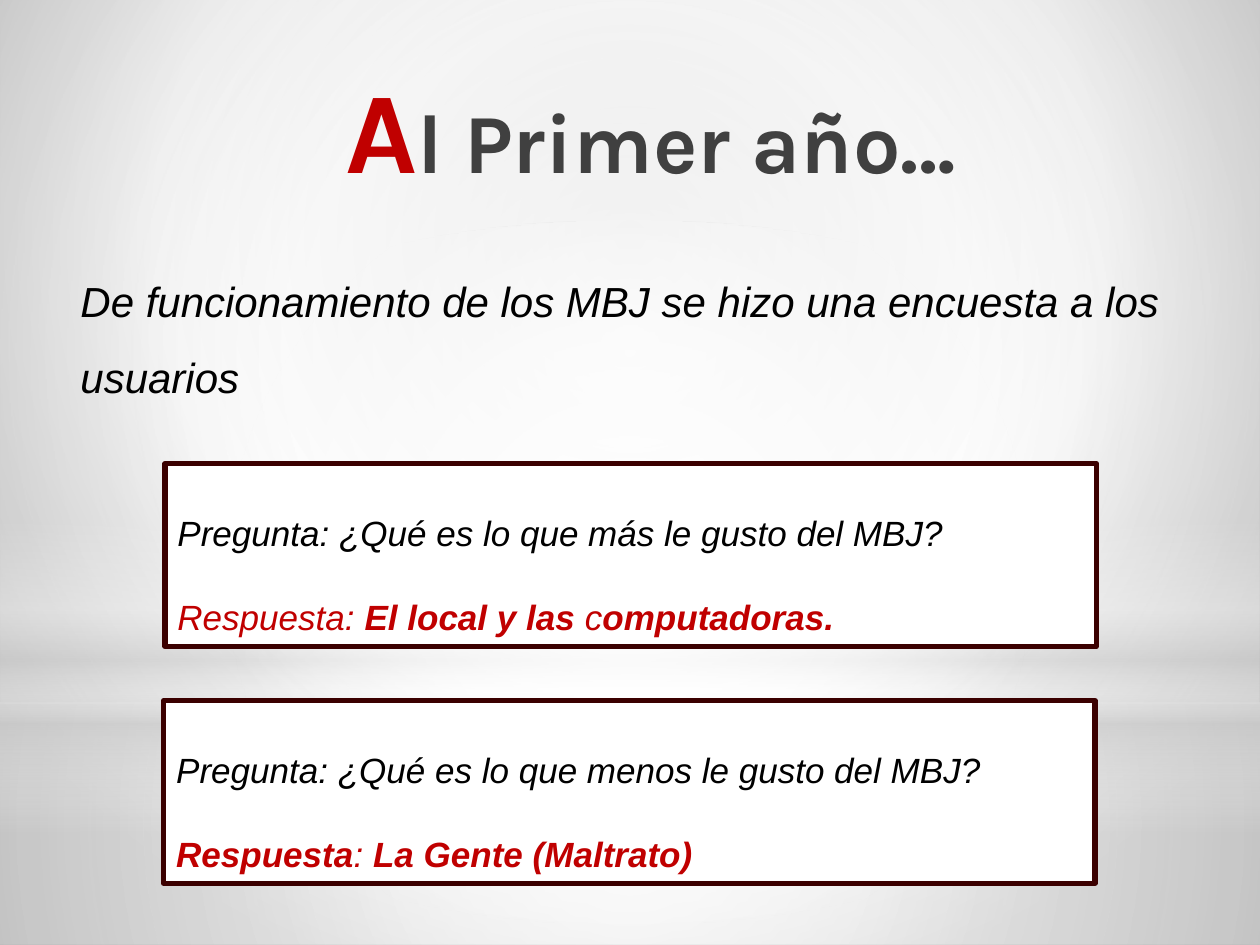
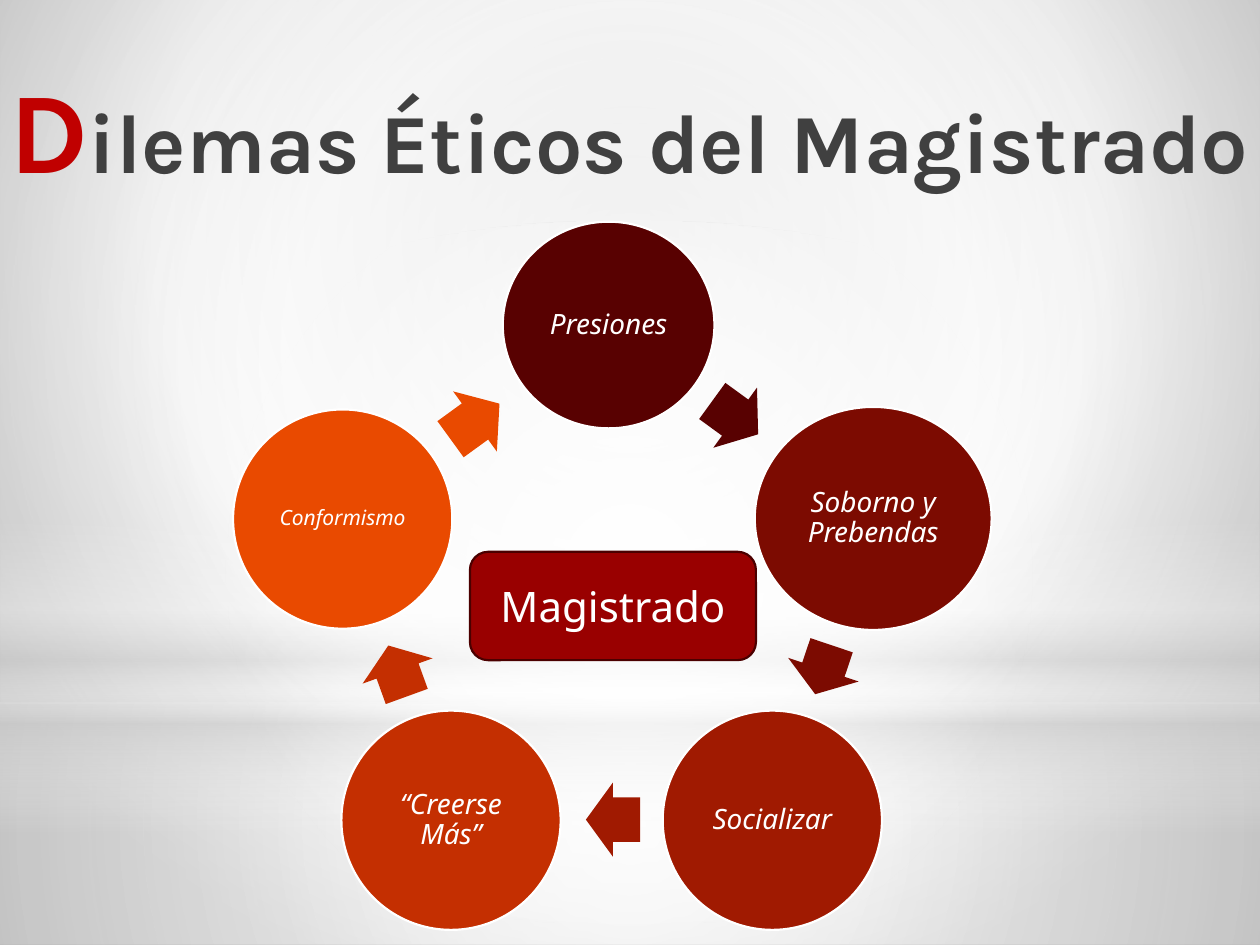
from lxml import etree
from pptx import Presentation
from pptx.dml.color import RGBColor
from pptx.enum.shapes import MSO_SHAPE as Shape
from pptx.enum.text import MSO_ANCHOR as Anchor, PP_ALIGN as Align
from pptx.oxml.ns import qn
from pptx.util import Inches, Pt

COLORS = {
    "white": "FFFFFF", "black": "000000", "silver": "CCCCCC",
    "red": "C00000", "frame": "3B0000",
    "center": "990000", "center_line": "4B0000",
    "pressure": "580101", "bribe": "7C0B01", "social": "A01A01",
    "belief": "C42F01", "conform": "E94A00",
}
CENTERED = (50, 50, 50, 50)

# Gradient stops: position, colour, opacity (all but the colour in percent)
BACKDROP = [(0, "C4C4C4", 100), (60, "FFFFFF", 100), (100, "A5A5A5", 100)]
TITLE_INK = [(0, "000000", 100), (40, "404040", 100), (100, "333333", 65)]
WHITE, SILVER = COLORS["white"], COLORS["silver"]
LAYERS = [
    (Shape.RECTANGLE, (0, 5.58, 10, 1.92), CENTERED,
     [(0, WHITE, 91), (37, WHITE, 76), (100, SILVER, 79)]),
    (Shape.RECTANGLE, (0, 0, 10, 5.58), CENTERED,
     [(0, WHITE, 89), (48, WHITE, 62), (100, SILVER, 79)]),
    (Shape.RECTANGLE, (0, 4.12, 10, 2.5), None,
     [(0, WHITE, 0), (29, WHITE, 30), (45, SILVER, 40),
      (55, WHITE, 26), (65, SILVER, 60), (100, WHITE, 0)]),
    (Shape.OVAL, (0, 1.75, 10, 5.58), CENTERED,
     [(0, WHITE, 100), (56, WHITE, 0)]),
]


def apply_gradient(element, stops, focus=None):
    """Swap the first solid fill for a gradient: circular at focus, else downward."""
    solid = next(element.iter(qn("a:solidFill")))
    gradient = etree.Element(qn("a:gradFill"), rotWithShape="1")
    stop_list = etree.SubElement(gradient, qn("a:gsLst"))
    for position, color, opacity in stops:
        stop = etree.SubElement(stop_list, qn("a:gs"), pos=str(position * 1000))
        ink = etree.SubElement(stop, qn("a:srgbClr"), val=color)
        if opacity < 100:
            etree.SubElement(ink, qn("a:alpha"), val=str(opacity * 1000))
    if focus:
        circle = etree.SubElement(gradient, qn("a:path"), path="circle")
        sides = {side: str(value * 1000) for side, value in zip("ltrb", focus)}
        etree.SubElement(circle, qn("a:fillToRect"), sides)
    else:
        etree.SubElement(gradient, qn("a:lin"), ang="5400000", scaled="0")
    solid.getparent().replace(solid, gradient)


def add_block(page, kind, at, fill, line=None, width=1.25):
    block = page.shapes.add_shape(kind, *map(Inches, at))
    block.shadow.inherit = False
    block.fill.solid()
    block.fill.fore_color.rgb = RGBColor.from_string(fill)
    if line:
        block.line.color.rgb = RGBColor.from_string(line)
        block.line.width = Pt(width)
    else:
        block.line.fill.background()
    return block


deck = Presentation()
deck.slide_width, deck.slide_height = Inches(10), Inches(7.5)

# Shared backdrop and title with a large red initial
pages = []
for initial, rest, title_at in [
    ("A", "l Primer año…", (0.48, 0.36, 9.37, 1.25)),
    ("D", "ilemas Éticos del Magistrado", (-0.42, 0.36, 10.83, 1.25)),
]:
    page = deck.slides.add_slide(deck.slide_layouts[6])
    pages.append(page)
    page.background.fill.solid()
    page.background.fill.fore_color.rgb = RGBColor.from_string(WHITE)
    apply_gradient(page.element, BACKDROP, (20, 10, 20, 60))
    for kind, at, focus, stops in LAYERS:
        layer = add_block(page, kind, at, WHITE)
        apply_gradient(layer.element, stops, focus)

    title = page.shapes.add_textbox(*map(Inches, title_at)).text_frame
    title.word_wrap = True
    title.vertical_anchor = Anchor.BOTTOM
    para = title.paragraphs[0]
    para.alignment = Align.CENTER
    for text, size in [(initial, 66), (rest, 48)]:
        span = para.add_run()
        span.text = text
        span.font.name, span.font.size, span.font.bold = "Karla", Pt(size), True
        span.font.color.rgb = RGBColor.from_string(COLORS["red"])
    apply_gradient(para._p.r_lst[-1], TITLE_INK)

survey_page, dilemma_page = pages

# Survey: introduction and two framed questions
intro = survey_page.shapes.add_textbox(*map(Inches, (0.54, 1.94, 9.19, 1.31))).text_frame
intro.word_wrap = True
intro.text = "De funcionamiento de los MBJ se hizo una encuesta a los usuarios"
para = intro.paragraphs[0]
para.line_spacing, para.space_before, para.space_after = 1.5, Pt(4.8), Pt(3)
font = para.runs[0].font
font.name, font.size, font.italic = "Arial", Pt(24), True
font.color.rgb = RGBColor.from_string(COLORS["black"])

# Each answer is a list of (text, bold)
questions = [
    (1.3, 5.56, "Pregunta: ¿Qué es lo que menos le gusto del MBJ?",
     [("Respuesta", True), (": ", False), ("La Gente (Maltrato)", True)]),
    (1.31, 3.68, "Pregunta: ¿Qué es lo que más le gusto del MBJ?",
     [("Respuesta: ", False), ("El local y las ", True), ("c", False),
      ("omputadoras.", True)]),
]
for left, top, question, answer in questions:
    box = add_block(survey_page, Shape.RECTANGLE, (left, top, 7.39, 1.45),
                    WHITE, COLORS["frame"], 3)
    frame = box.text_frame
    frame.word_wrap = True
    frame.vertical_anchor = Anchor.TOP
    lines = [(frame.paragraphs[0], [(question, False)], "black"),
             (frame.add_paragraph(), answer, "red")]
    for para, spans, color in lines:
        para.alignment, para.line_spacing = Align.LEFT, 2.0
        for text, bold in spans:
            span = para.add_run()
            span.text = text
            font = span.font
            font.name, font.size, font.italic, font.bold = "Arial", Pt(20), True, bold
            font.color.rgb = RGBColor.from_string(COLORS[color])

# Dilemmas: ring of circles, each followed by an arrow, around the magistrate
# text, size, colour, circle place, arrow left, top, width and rotation
dilemmas = [
    ("Presiones", 16, "pressure", (3.99, 1.76, 1.68, 1.64), (5.61, 3.02, 0.45), 36),
    ("Soborno y Prebendas", 16, "bribe", (5.99, 3.23, 1.88, 1.77), (6.33, 5.02, 0.41), 108.6),
    ("Socializar", 16, "social", (5.26, 5.64, 1.74, 1.74), (4.65, 6.21, 0.43), 180),
    ("“Creerse Más”", 16, "belief", (2.71, 5.64, 1.74, 1.74), (2.94, 5.03, 0.43), 250.1),
    ("Conformismo", 12, "conform", (1.85, 3.25, 1.74, 1.74), (3.53, 3.05, 0.48), 324),
]
labels = []
for text, size, color, circle_at, arrow_at, rotation in dilemmas:
    circle = add_block(dilemma_page, Shape.OVAL, circle_at, COLORS[color], WHITE)
    frame = circle.text_frame
    frame.margin_left = frame.margin_right = Inches(0.02)
    frame.margin_top = frame.margin_bottom = Inches(0.02)
    labels.append((frame, text, size, True, 0.9))

    arrow = add_block(dilemma_page, Shape.RIGHT_ARROW, (*arrow_at, 0.59), COLORS[color])
    arrow.adjustments[0], arrow.adjustments[1] = 0.6, 0.5
    arrow.rotation = rotation

center = add_block(dilemma_page, Shape.ROUNDED_RECTANGLE, (3.73, 4.38, 2.27, 0.86),
                   COLORS["center"], COLORS["center_line"])
labels.append((center.text_frame, "Magistrado", 24, False, 1.0))

for frame, text, size, italic, spacing in labels:
    frame.word_wrap = True
    frame.vertical_anchor = Anchor.MIDDLE
    frame.text = text
    para = frame.paragraphs[0]
    para.alignment, para.line_spacing = Align.CENTER, spacing
    font = para.runs[0].font
    font.name, font.size, font.italic = "Noto Sans", Pt(size), italic
    font.color.rgb = RGBColor.from_string(WHITE)

deck.save("out.pptx")
